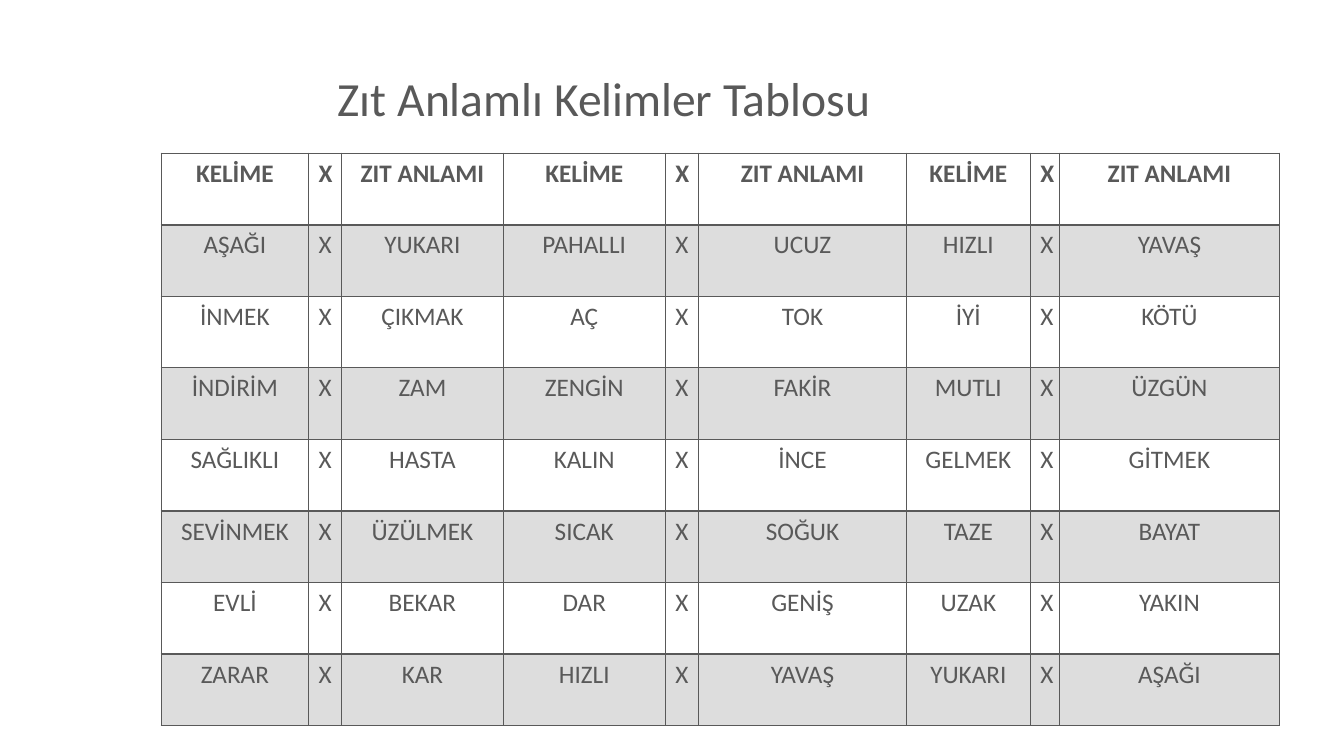
from lxml import etree
from pptx import Presentation
from pptx.dml.color import RGBColor
from pptx.enum.text import MSO_ANCHOR, PP_ALIGN
from pptx.oxml.ns import qn
from pptx.util import Inches, Pt

COLORS = {"gray": "595959"}
GRAY = RGBColor.from_string(COLORS["gray"])
COLUMN_WIDTHS = [1.46, 0.33, 1.6, 1.61, 0.33, 2.06, 1.23, 0.29, 2.18]
ROW_HEIGHT = 0.71
HEADER = ["KELİME", "ZIT ANLAMI"] * 3
WORDS = [
    ["AŞAĞI", "YUKARI", "PAHALLI", "UCUZ", "HIZLI", "YAVAŞ"],
    ["İNMEK", "ÇIKMAK", "AÇ", "TOK", "İYİ", "KÖTÜ"],
    ["İNDİRİM", "ZAM", "ZENGİN", "FAKİR", "MUTLI", "ÜZGÜN"],
    ["SAĞLIKLI", "HASTA", "KALIN", "İNCE", "GELMEK", "GİTMEK"],
    ["SEVİNMEK", "ÜZÜLMEK", "SICAK", "SOĞUK", "TAZE", "BAYAT"],
    ["EVLİ", "BEKAR", "DAR", "GENİŞ", "UZAK", "YAKIN"],
    ["ZARAR", "KAR", "HIZLI", "YAVAŞ", "YUKARI", "AŞAĞI"],
]


def add_border(cell, side, width):
    ln = etree.SubElement(cell._tc.get_or_add_tcPr(), qn(f"a:ln{side}"), w=str(Pt(width)))
    fill = etree.SubElement(ln, qn("a:solidFill"))
    etree.SubElement(fill, qn("a:srgbClr"), val=COLORS["gray"])


def format_text(p, size, bold=False):
    for r in p.runs:
        r.font.name = "Calibri"
        r.font.size = Pt(size)
        r.font.bold = bold
        r.font.color.rgb = GRAY


prs = Presentation()
prs.slide_width, prs.slide_height = Inches(13.33), Inches(7.5)
s = prs.slides.add_slide(prs.slide_layouts[5])

title = s.shapes.title
title.left, title.top = Inches(3.25), Inches(0.49)
title.width, title.height = Inches(6.36), Inches(0.82)
tf = title.text_frame
tf.text = "Zıt Anlamlı Kelimler Tablosu"
tf.vertical_anchor = MSO_ANCHOR.BOTTOM
p = tf.paragraphs[0]
p.alignment = PP_ALIGN.LEFT
p.line_spacing = 0.9
format_text(p, 34)

rows = [HEADER] + WORDS
table = s.shapes.add_table(
    len(rows), len(COLUMN_WIDTHS), Inches(1.6), Inches(1.52),
    Inches(sum(COLUMN_WIDTHS)), Inches(ROW_HEIGHT * len(rows)),
).table
table.horz_banding = False
table.first_row = False
for column, width in zip(table.columns, COLUMN_WIDTHS):
    column.width = Inches(width)

for i, words in enumerate(rows):
    table.rows[i].height = Inches(ROW_HEIGHT)
    pairs = zip(words[::2], words[1::2])
    texts = [text for word, opposite in pairs for text in (word, "X", opposite)]
    for j, text in enumerate(texts):
        cell = table.cell(i, j)
        cell.text = text
        p = cell.text_frame.paragraphs[0]
        p.alignment = PP_ALIGN.CENTER
        format_text(p, 18, bold=i == 0)
        for side in "LRTB":
            thick = (i, side) in [(0, "B"), (1, "T")]
            add_border(cell, side, 2 if thick else 1)
        if i % 2:
            cell.fill.solid()
            cell.fill.fore_color.rgb = GRAY
            color = cell._tc.tcPr.find(qn("a:solidFill")).find(qn("a:srgbClr"))
            etree.SubElement(color, qn("a:alpha"), val="20000")
        else:
            cell.fill.background()

prs.save("out.pptx")
